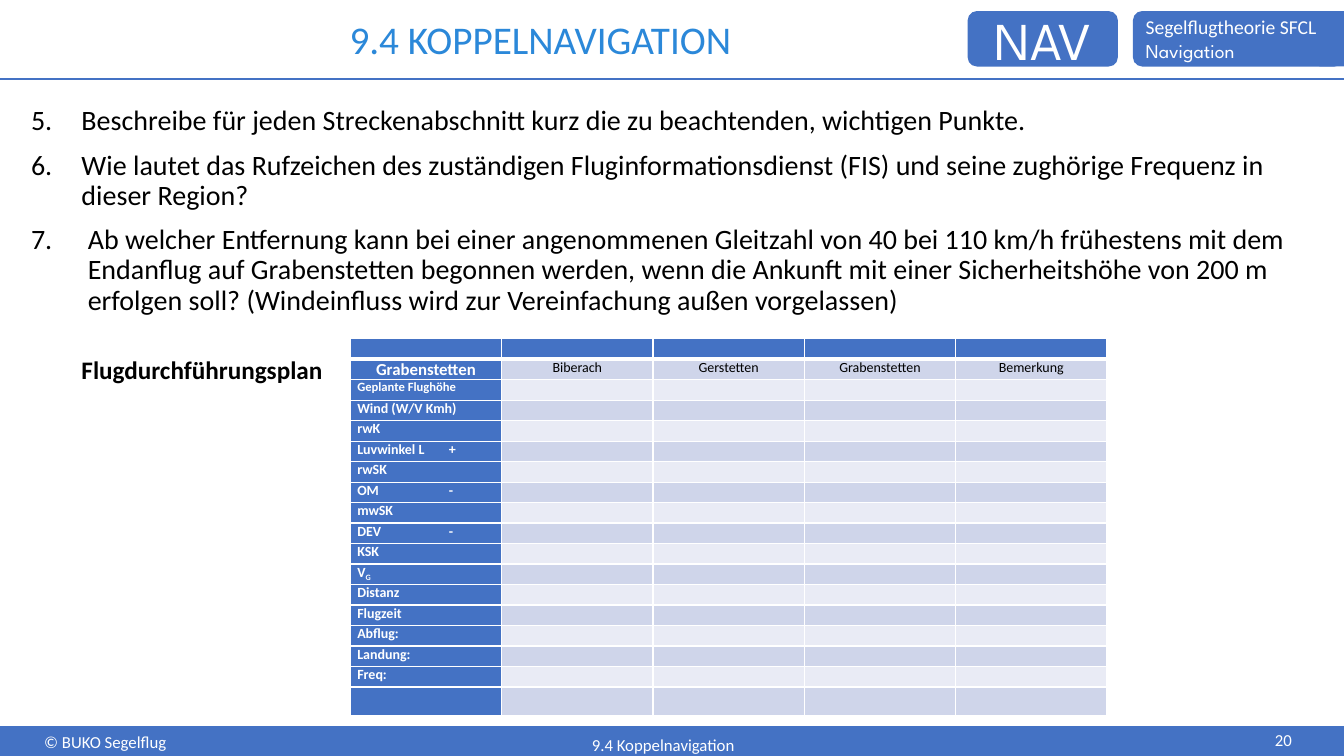
from dataclasses import dataclass

from lxml.etree import SubElement
from pptx import Presentation
from pptx.dml.color import RGBColor
from pptx.enum.shapes import MSO_CONNECTOR as Connector, MSO_SHAPE as Preset
from pptx.enum.text import MSO_ANCHOR as Anchor, MSO_AUTO_SIZE as AutoSize, PP_ALIGN as Align
from pptx.oxml.ns import qn
from pptx.util import Pt


@dataclass(frozen=True)
class Theme:
    font: str = "Calibri"
    badge_font: str = "League Spartan"
    blue: str = "4472C4"
    heading: str = "2B88D9"
    white: str = "FFFFFF"
    black: str = "000000"
    bands: tuple[str, str] = ("E9EBF5", "CFD5EA")
    title: float = 28
    badge: float = 38
    topic: float = 14
    body: float = 20
    plan: float = 18
    small: float = 12
    cell: float = 10
    tiny: float = 9


@dataclass(frozen=True)
class Box:
    left: float
    top: float
    width: float
    height: float

    def place(self) -> tuple[Pt, Pt, Pt, Pt]:
        return Pt(self.left), Pt(self.top), Pt(self.width), Pt(self.height)


@dataclass(frozen=True)
class Style:
    size: float
    color: str
    bold: bool = False
    font: str = Theme.font


@dataclass(frozen=True)
class Question:
    number: int
    text: str
    indent: float = 36


@dataclass(frozen=True)
class Label:
    text: str
    sign: str = ""
    subscript: str = ""
    size: float = Theme.cell


@dataclass(frozen=True)
class FooterNote:
    box: Box
    text: str
    align: Align = Align.LEFT


THEME = Theme()
SLIDE_WIDTH, SLIDE_HEIGHT = 960, 540
FOOTER_TOP, HEADER_LINE = 519.1, 56.2
BADGE_TOP, BADGE_HEIGHT = 7.9, 39.6
ROW_HEIGHT, LAST_ROW_HEIGHT, COLUMN_WIDTH = 14.65, 20.7, 108.1
SIGN_TAB = 65.5

QUESTIONS = [
    Question(5, "Beschreibe für jeden Streckenabschnitt kurz die zu beachtenden, wichtigen Punkte."),
    Question(6, "Wie lautet das Rufzeichen des zuständigen Fluginformationsdienst (FIS) und seine "
                "zughörige Frequenz in dieser Region?"),
    Question(7, "Ab welcher Entfernung kann bei einer angenommenen Gleitzahl von 40 bei 110 km/h "
                "frühestens mit dem Endanflug auf Grabenstetten begonnen werden, wenn die Ankunft "
                "mit einer Sicherheitshöhe von 200 m erfolgen soll? (Windeinfluss wird zur "
                "Vereinfachung außen vorgelassen)", 40.5),
]
WAYPOINTS = ["Biberach", "Gerstetten", "Grabenstetten", "Bemerkung"]
LABELS = [
    Label(""), Label("Grabenstetten", size=THEME.small), Label("Geplante Flughöhe", size=THEME.tiny),
    Label("Wind (W/V Kmh)"), Label("rwK"), Label("Luvwinkel L", "+"), Label("rwSK"),
    Label("OM", "-"), Label("mwSK"), Label("DEV", "-"), Label("KSK"), Label("V", subscript="G"),
    Label("Distanz"), Label("Flugzeit"), Label("Abflug:"), Label("Landung:"), Label("Freq:"), Label(""),
]
FOOTER_NOTES = [
    FooterNote(Box(24.5, FOOTER_TOP, 102.2, 20.9), "© BUKO Segelflug"),
    FooterNote(Box(119.5, 521.3, 708.5, 18.7), "9.4 Koppelnavigation", Align.CENTER),
    FooterNote(Box(903.6, 517.7, 42.5, 22.3), "20"),
]


def add_run(paragraph, text: str, style: Style):
    run = paragraph.add_run()
    run.text = text
    run.font.name = style.font
    run.font.size = Pt(style.size)
    run.font.bold = style.bold
    run.font.color.rgb = RGBColor.from_string(style.color)
    return run


def add_panel(slide, preset: Preset, box: Box):
    panel = slide.shapes.add_shape(preset, *box.place())
    panel.shadow.inherit = False
    panel.fill.solid()
    panel.fill.fore_color.rgb = RGBColor.from_string(THEME.blue)
    panel.line.fill.background()
    panel.text_frame.vertical_anchor = Anchor.MIDDLE
    return panel.text_frame


def add_rule(slide, top: float) -> None:
    rule = slide.shapes.add_connector(Connector.STRAIGHT, 0, Pt(top), Pt(SLIDE_WIDTH), Pt(top))
    rule.line.color.rgb = RGBColor.from_string(THEME.blue)
    rule.line.width = Pt(1.25)
    SubElement(rule._element.spPr, qn("a:effectLst"))


def add_text_area(slide, box: Box):
    frame = slide.shapes.add_textbox(*box.place()).text_frame
    frame.word_wrap = True
    return frame


def add_header(slide) -> None:
    heading = slide.shapes.title
    heading.left, heading.top, heading.width, heading.height = Box(74.9, 10.1, 622.1, 39.6).place()
    frame = heading.text_frame
    frame.auto_size = AutoSize.NONE
    frame.vertical_anchor = Anchor.MIDDLE
    paragraph = frame.paragraphs[0]
    paragraph.alignment = Align.CENTER
    paragraph.line_spacing = 0.9
    add_run(paragraph, "9.4 KOPPELNAVIGATION", Style(THEME.title, THEME.heading))

    badge = add_panel(slide, Preset.ROUNDED_RECTANGLE, Box(691.2, BADGE_TOP, 107.3, BADGE_HEIGHT))
    badge.paragraphs[0].alignment = Align.CENTER
    add_run(badge.paragraphs[0], "NAV", Style(THEME.badge, THEME.white, font=THEME.badge_font))

    topic = add_panel(slide, Preset.ROUNDED_RECTANGLE, Box(809.3, BADGE_TOP, 150.7, BADGE_HEIGHT))
    for index, (text, font) in enumerate([("Segelflugtheorie SFCL", THEME.font),
                                          ("Navigation", THEME.badge_font)]):
        line = topic.add_paragraph() if index else topic.paragraphs[0]
        line.alignment = Align.LEFT
        add_run(line, text, Style(THEME.topic, THEME.white, font=font))
    add_panel(slide, Preset.RECTANGLE, Box(942.5, BADGE_TOP, 17.5, BADGE_HEIGHT))
    add_rule(slide, HEADER_LINE)


def add_questions(slide) -> None:
    frame = add_text_area(slide, Box(15.1, 72.7, 922.3, 437))
    for index, question in enumerate(QUESTIONS):
        paragraph = frame.add_paragraph() if index else frame.paragraphs[0]
        paragraph.line_spacing = 0.9
        if index:
            paragraph.space_before = Pt(10)
        properties = paragraph._p.get_or_add_pPr()
        properties.set("marL", str(Pt(question.indent)))
        properties.set("indent", str(-Pt(question.indent)))
        SubElement(properties, qn("a:buAutoNum"), type="arabicPeriod", startAt=str(question.number))
        add_run(paragraph, question.text, Style(THEME.body, THEME.black))
    plan = frame.add_paragraph()
    plan.line_spacing = 0.9
    plan.space_before = Pt(30)
    plan._p.get_or_add_pPr().set("marL", str(Pt(36)))
    add_run(plan, "Flugdurchführungsplan", Style(THEME.plan, THEME.black, True))


def format_cell(cell, fill: str, top: float, bottom: float) -> None:
    cell.margin_left = cell.margin_right = Pt(5)
    cell.margin_top = cell.margin_bottom = 0
    properties = cell._tc.get_or_add_tcPr()
    for side, width in (("L", 1), ("R", 1), ("T", top), ("B", bottom)):
        border = SubElement(properties, qn(f"a:ln{side}"), w=str(Pt(width)))
        SubElement(SubElement(border, qn("a:solidFill")), qn("a:srgbClr"), val=THEME.white)
    cell.fill.solid()
    cell.fill.fore_color.rgb = RGBColor.from_string(fill)


def write_label(paragraph, label: Label) -> None:
    style = Style(label.size, THEME.white, True)
    if label.sign:
        tabs = SubElement(paragraph._p.get_or_add_pPr(), qn("a:tabLst"))
        SubElement(tabs, qn("a:tab"), pos=str(Pt(SIGN_TAB)), algn="l")
    add_run(paragraph, label.text + (f"\t{label.sign}" if label.sign else ""), style)
    if label.subscript:
        add_run(paragraph, label.subscript, style)._r.get_or_add_rPr().set("baseline", "-25000")


def add_flight_plan(slide) -> None:
    columns = len(WAYPOINTS) + 1
    height = ROW_HEIGHT * (len(LABELS) - 1) + LAST_ROW_HEIGHT
    box = Box(250.2, 242, COLUMN_WIDTH * columns, height)
    plan = slide.shapes.add_table(len(LABELS), columns, *box.place()).table
    for column in plan.columns:
        column.width = Pt(COLUMN_WIDTH)
    for row, label in enumerate(LABELS):
        plan.rows[row].height = Pt(LAST_ROW_HEIGHT if row == len(LABELS) - 1 else ROW_HEIGHT)
        for column in range(columns):
            cell = plan.cell(row, column)
            fill = THEME.blue if row == 0 or column == 0 else THEME.bands[row % 2]
            format_cell(cell, fill, 3 if row == 1 else 1, 3 if row == 0 else 1)
            paragraph = cell.text_frame.paragraphs[0]
            if row == 1:
                paragraph.alignment = Align.CENTER
            if column == 0 and label.text:
                write_label(paragraph, label)
            elif row == 1:
                add_run(paragraph, WAYPOINTS[column - 1], Style(THEME.cell, THEME.black))
            else:
                SubElement(paragraph._p, qn("a:endParaRPr"), sz=str(int(THEME.cell * 100)))


def add_footer(slide) -> None:
    add_panel(slide, Preset.RECTANGLE, Box(0, FOOTER_TOP, SLIDE_WIDTH, SLIDE_HEIGHT - FOOTER_TOP))
    add_rule(slide, FOOTER_TOP)
    for note in FOOTER_NOTES:
        paragraph = add_text_area(slide, note.box).paragraphs[0]
        paragraph.alignment = note.align
        add_run(paragraph, note.text, Style(THEME.small, THEME.white))


def main() -> None:
    deck = Presentation()
    deck.slide_width, deck.slide_height = Pt(SLIDE_WIDTH), Pt(SLIDE_HEIGHT)
    slide = deck.slides.add_slide(deck.slide_layouts[5])
    add_footer(slide)
    add_header(slide)
    add_questions(slide)
    add_flight_plan(slide)
    deck.save("out.pptx")


if __name__ == "__main__":
    main()
